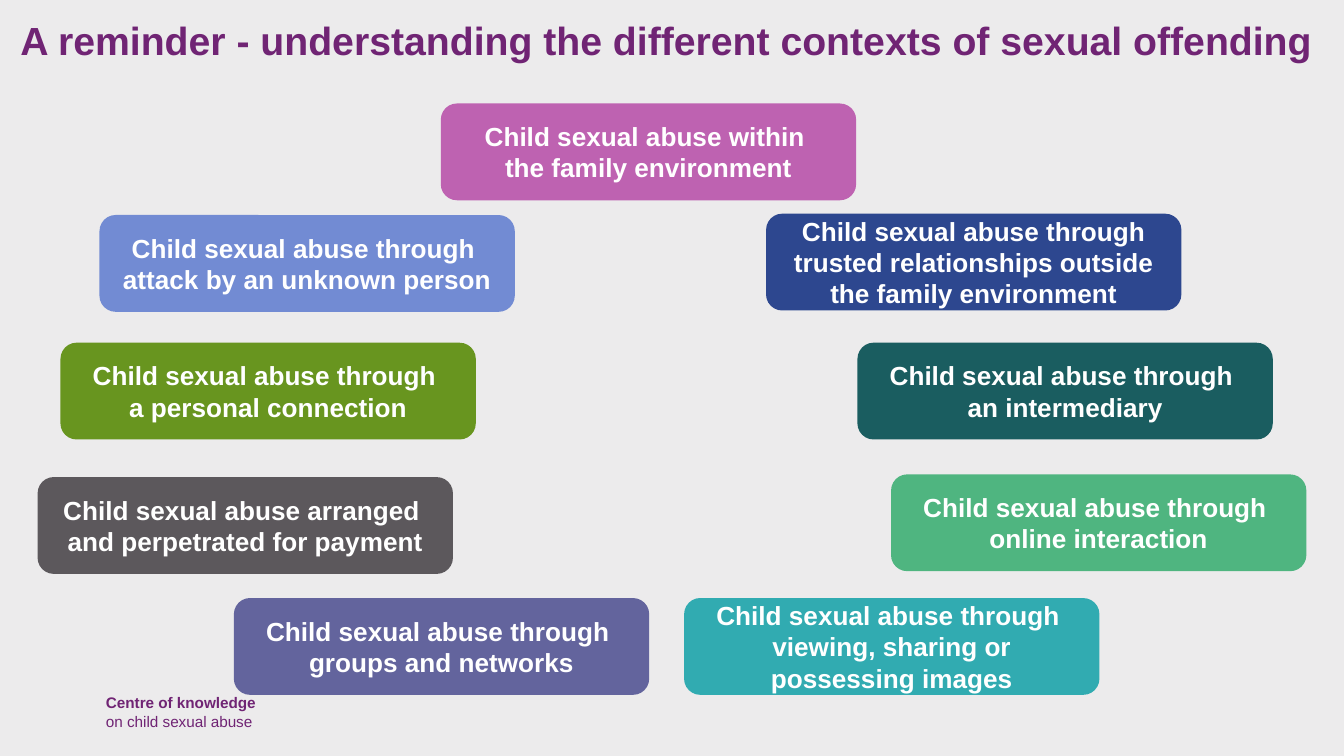
from pptx import Presentation
from pptx.dml.color import RGBColor
from pptx.enum.shapes import MSO_SHAPE
from pptx.enum.text import MSO_ANCHOR, PP_ALIGN
from pptx.util import Inches, Pt

COLOURS = {
    "background": "ECEBEC",
    "purple": "702474",
    "white": "FFFFFF",
    "pink": "BE62B1",
    "green": "68951F",
    "turquoise": "31ABB1",
    "mint": "4FB580",
    "navy": "2D478F",
    "petrol": "1A5D60",
    "sky": "728BD3",
    "grey": "5C585C",
    "violet": "63649D",
}
SLIDE_WIDTH = 10
CARD_WIDTH, CARD_HEIGHT = 3.09, 0.72


def colour(name):
    return RGBColor.from_string(COLOURS[name])


def style(paragraph, size, colour_name):
    for run in paragraph.runs:
        run.font.name = "Arial"
        run.font.size = Pt(size)
        run.font.bold = True
        run.font.color.rgb = colour(colour_name)


# Widescreen slide, 16:9
prs = Presentation()
prs.slide_width = Inches(SLIDE_WIDTH)
prs.slide_height = Inches(SLIDE_WIDTH * 9 / 16)
slide = prs.slides.add_slide(prs.slide_layouts[6])
slide.background.fill.solid()
slide.background.fill.fore_color.rgb = colour("background")

# Footer with the name of the centre, one paragraph with a line break
footer = slide.shapes.add_textbox(Inches(0.69), Inches(5.11), Inches(1.79), Inches(0.38))
footer.text_frame.word_wrap = True
centre_name = footer.text_frame.paragraphs[0]
centre_name.text = "Centre of knowledge\von child sexual abuse"
style(centre_name, 8.2, "purple")
centre_name.runs[1].font.bold = False

# Title
title = slide.shapes.add_textbox(Inches(0), Inches(0.11), Inches(SLIDE_WIDTH), Inches(0.7))
title.text_frame.word_wrap = True
title.text_frame.text = "A reminder - understanding the different contexts of sexual offending "
heading = title.text_frame.paragraphs[0]
heading.alignment = PP_ALIGN.CENTER
heading.line_spacing = 0.9
style(heading, 21, "purple")

# Ring of contexts: left, top, fill, text
contexts = [
    (3.28, 0.77, "pink", "Child sexual abuse within \nthe family environment"),
    (0.45, 2.55, "green", "Child sexual abuse through \na personal connection"),
    (5.09, 4.45, "turquoise", "Child sexual abuse through \nviewing, sharing or possessing images"),
    (6.63, 3.53, "mint", "Child sexual abuse through \nonline interaction"),
    (5.7, 1.59, "navy", "Child sexual abuse through trusted relationships outside the family environment"),
    (6.38, 2.55, "petrol", "Child sexual abuse through \nan intermediary"),
    (0.74, 1.6, "sky", "Child sexual abuse through \nattack by an unknown person"),
    (0.28, 3.55, "grey", "Child sexual abuse arranged \nand perpetrated for payment"),
    (1.74, 4.45, "violet", "Child sexual abuse through \ngroups and networks"),
]
for left, top, fill, text in contexts:
    card = slide.shapes.add_shape(
        MSO_SHAPE.ROUNDED_RECTANGLE,
        Inches(left), Inches(top), Inches(CARD_WIDTH), Inches(CARD_HEIGHT),
    )
    card.shadow.inherit = False
    card.fill.solid()
    card.fill.fore_color.rgb = colour(fill)
    card.line.fill.background()
    card.text_frame.word_wrap = True
    card.text_frame.vertical_anchor = MSO_ANCHOR.MIDDLE
    card.text_frame.text = text
    for paragraph in card.text_frame.paragraphs:
        paragraph.alignment = PP_ALIGN.CENTER
        style(paragraph, 14, "white")

prs.save("out.pptx")
